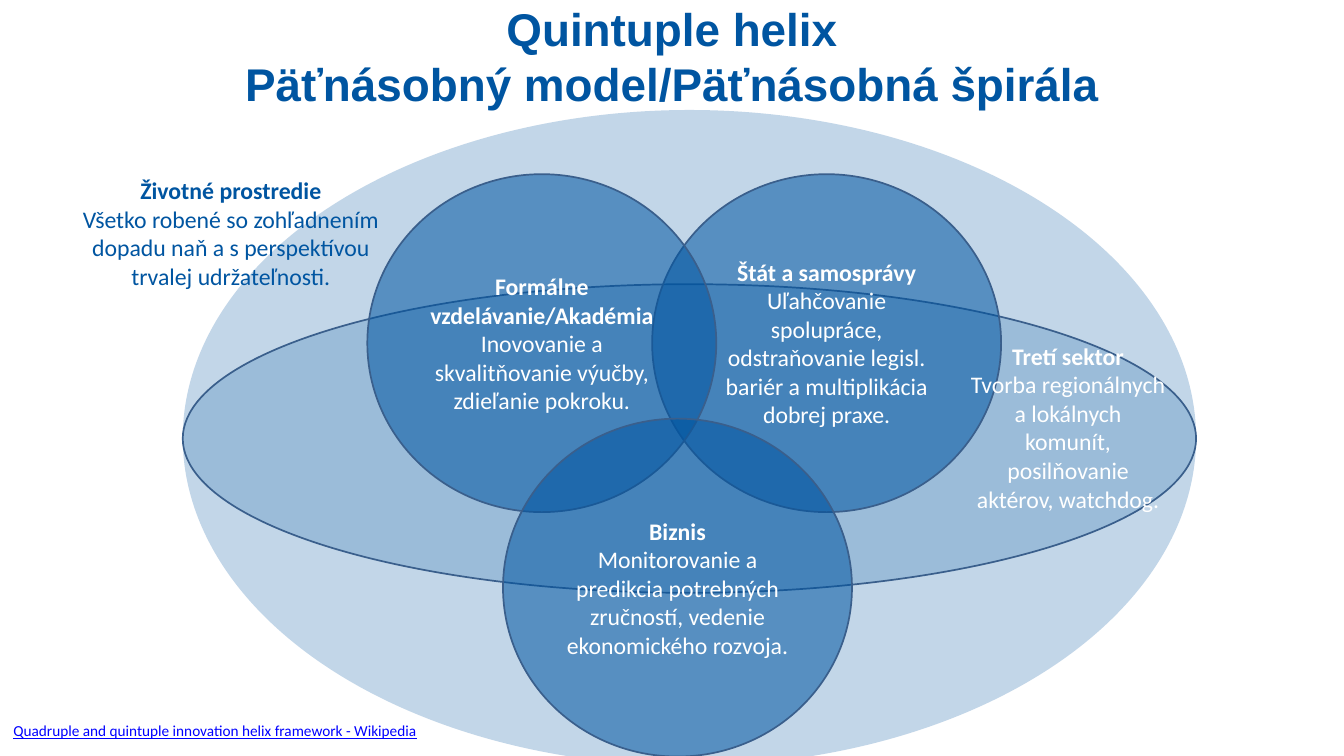
import pptx
import pptx.dml.color
import pptx.enum.shapes
import pptx.enum.text
import pptx.util
from pptx.util import Inches
from lxml import etree

BLUE, OUTLINE, WHITE, LINK = "0055A1", "3A5F8C", "FFFFFF", "0000FF"
CENTER = pptx.enum.text.PP_ALIGN.CENTER
MIDDLE = pptx.enum.text.MSO_ANCHOR.MIDDLE


def color(hex_code):
    return pptx.dml.color.RGBColor.from_string(hex_code)


def write(frame, lines, hex_code, size=28, font="Calibri", align=CENTER, heading=True):
    """Fill a frame with paragraphs; the first is bold when it is a heading."""
    for index, line in enumerate(lines):
        paragraph = frame.paragraphs[0] if index == 0 else frame.add_paragraph()
        paragraph.text = line
        paragraph.alignment = align
        paragraph.font.name = font
        paragraph.font.size = pptx.util.Pt(size)
        paragraph.font.bold = heading and index == 0
        paragraph.font.color.rgb = color(hex_code)


def add_ellipse(slide, box, opacity, outlined=True):
    ellipse = slide.shapes.add_shape(
        pptx.enum.shapes.MSO_SHAPE.OVAL, *map(Inches, box))
    ellipse.shadow.inherit = False
    ellipse.fill.solid()
    ellipse.fill.fore_color.rgb = color(BLUE)
    fill_color = ellipse.fill._xPr.find(".//" + pptx.oxml.ns.qn("a:srgbClr"))
    etree.SubElement(fill_color, pptx.oxml.ns.qn("a:alpha"), val=str(opacity * 1000))
    if outlined:
        ellipse.line.color.rgb = color(OUTLINE)
        ellipse.line.width = pptx.util.Pt(2)
    else:
        ellipse.line.fill.background()
    return ellipse


def add_label(slide, box, lines, hex_code, **style):
    label = slide.shapes.add_textbox(*map(Inches, box))
    label.text_frame.word_wrap = True
    write(label.text_frame, lines, hex_code, **style)
    return label


def add_title(slide, box):
    title = add_label(slide, box, ["Quintuple helix\vPäťnásobný model/Päťnásobná špirála"],
                      BLUE, size=54, font="Arial")
    frame = title.text_frame
    frame.margin_left = frame.margin_right = frame.margin_top = frame.margin_bottom = 0
    frame.vertical_anchor = MIDDLE


def add_helix(slide, left, top, width, height):
    # Environment around everything, third sector as the flat ellipse
    add_ellipse(slide, (left, top, width, height), 24, outlined=False)
    add_ellipse(slide, (left, top + 2.85, width, 5.05), 20)

    # Three overlapping circles
    circles = [
        (7.68, 1.05, ["Štát a samosprávy", "Uľahčovanie spolupráce,",
                      "odstraňovanie legisl. bariér a multiplikácia dobrej praxe."]),
        (3.02, 1.05, ["Formálne vzdelávanie/Akadémia",
                      "Inovovanie a skvalitňovanie výučby, zdieľanie pokroku."]),
        (5.24, 5.05, ["Biznis", "Monitorovanie a predikcia potrebných zručností, "
                      "vedenie ekonomického rozvoja."]),
    ]
    for dx, dy, lines in circles:
        circle = add_ellipse(slide, (left + dx, top + dy, 5.71, 5.53), 55)
        circle.text_frame.word_wrap = True
        circle.text_frame.vertical_anchor = MIDDLE
        write(circle.text_frame, lines, WHITE)

    # Labels of the two outer ellipses
    add_label(slide, (left + 12.78, top + 3.74, 3.41, 2.93),
              ["Tretí sektor", "Tvorba regionálnych a lokálnych komunít, "
               "posilňovanie aktérov, watchdog."], WHITE)
    add_label(slide, (left - 1.81, top + 1.03, 5.19, 1.99),
              ["Životné prostredie", "Všetko robené so zohľadnením dopadu naň "
               "a s perspektívou trvalej udržateľnosti."], BLUE)


def add_reference(slide, box):
    reference = add_label(
        slide, box, ["Quadruple and quintuple innovation helix framework - Wikipedia"],
        LINK, size=18, align=pptx.enum.text.PP_ALIGN.LEFT, heading=False)
    reference.text_frame.word_wrap = False
    reference.text_frame.paragraphs[0].font.underline = True


def main():
    presentation = pptx.Presentation()
    presentation.slide_width = Inches(21.99)
    presentation.slide_height = Inches(12.37)
    slide = presentation.slides.add_slide(presentation.slide_layouts[6])
    add_helix(slide, 2.99, 1.8, 16.58, 10.73)
    add_title(slide, (0.12, 0, 21.75, 1.82))
    add_reference(slide, (0.12, 11.76, 7.34, 0.4))
    presentation.save("out.pptx")


if __name__ == "__main__":
    main()
